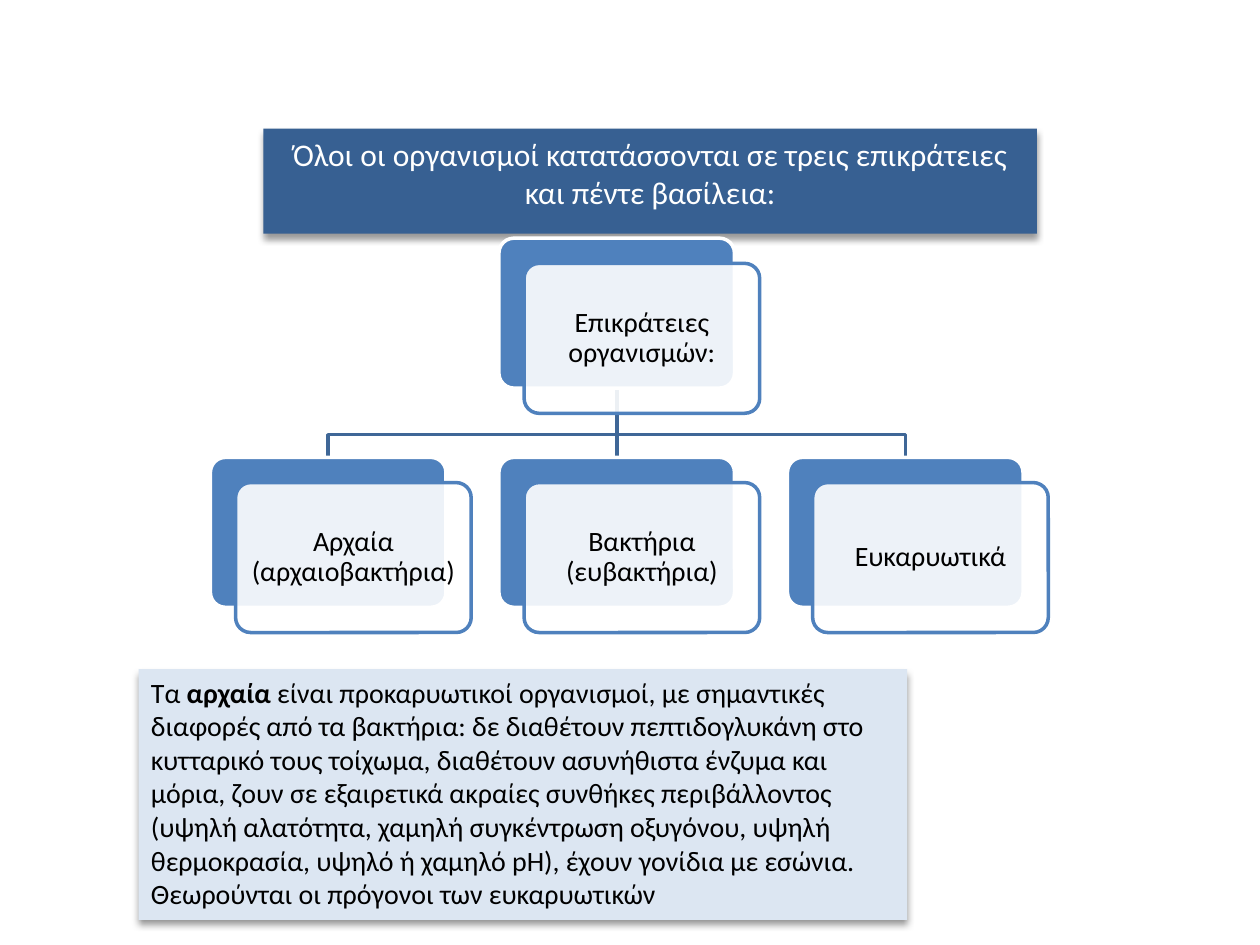
"""Build a slide that shows the three domains of organisms as a tree."""
from lxml.etree import SubElement
from pptx import Presentation
from pptx.dml.color import RGBColor
from pptx.enum.shapes import MSO_CONNECTOR as Connector, MSO_SHAPE as Preset
from pptx.enum.text import MSO_ANCHOR as Anchor, MSO_AUTO_SIZE as AutoSize, PP_ALIGN as Align
from pptx.oxml.ns import qn
from pptx.util import Inches, Pt


def paint(shape, fill, line=None, alpha=None, shadow=False):
    """Set the fill, outline and shadow of a shape from hex strings."""
    shape.fill.solid()
    shape.fill.fore_color.rgb = RGBColor.from_string(fill)
    if alpha:
        color = shape.fill._xPr.find(".//" + qn("a:srgbClr"))
        SubElement(color, qn("a:alpha"), val=str(alpha * 1000))
    if line:
        shape.line.color.rgb = RGBColor.from_string(line)
        shape.line.width = Pt(2)
    else:
        shape.line.fill.background()
    shape.shadow.inherit = False
    if shadow:
        effects = shape._element.spPr.find(qn("a:effectLst"))
        outer = SubElement(effects, qn("a:outerShdw"), blurRad=str(Pt(4)), dist=str(Pt(3)),
                           dir="5400000", rotWithShape="0")
        black = SubElement(outer, qn("a:srgbClr"), val="000000")
        SubElement(black, qn("a:alpha"), val="40000")


def write(shape, runs, size, color, align, frame_format):
    """Write (text, bold) runs as the one paragraph of a shape."""
    for name, value in {"word_wrap": True, **frame_format}.items():
        setattr(shape.text_frame, name, value)
    paragraph = shape.text_frame.paragraphs[0]
    paragraph.alignment = align
    for text, bold in runs:
        run = paragraph.add_run()
        run.text = text
        for name, value in {"name": "Calibri", "size": Pt(size), "bold": bold}.items():
            setattr(run.font, name, value)
        run.font.color.rgb = RGBColor.from_string(color)
    return paragraph


presentation = Presentation()
presentation.slide_width, presentation.slide_height = Inches(10), Inches(7.5)
slide = presentation.slides.add_slide(presentation.slide_layouts[5])
shapes = slide.shapes

grow = {"auto_size": AutoSize.SHAPE_TO_FIT_TEXT, "vertical_anchor": Anchor.TOP}
title = shapes.title
title_box = {"left": 2.09, "top": 1.02, "width": 6.14, "height": 0.71}
for name, value in title_box.items():
    setattr(title, name, Inches(value))
paint(title, "376092", shadow=True)
write(title, [("Όλοι οι οργανισμοί κατατάσσονται σε τρεις επικράτειες και πέντε βασίλεια:", False)],
      18, "FFFFFF", Align.CENTER, grow)

card_width, card_height = Inches(1.87), Inches(1.19)
columns = [Inches(1.67 + 2.29 * column) for column in range(3)]
rows = [Inches(1.89), Inches(3.63)]
shift = Inches(0.2)

centers = [left + card_width // 2 for left in columns]
trunk, start, bend, end = centers[1], rows[0] + card_height, Inches(3.45), rows[1]
branches = []
for center in (centers[2], centers[0]):
    builder = shapes.build_freeform(trunk, start)
    builder.add_line_segments([(trunk, bend), (center, bend), (center, end)], close=False)
    branch = builder.convert_to_shape()
    branch.fill.background()
    branches.append(branch)
branches.append(shapes.add_connector(Connector.STRAIGHT, trunk, start, trunk, end))
for branch in branches:
    branch.line.color.rgb = RGBColor.from_string("3F6797")
    branch.line.width = Pt(2)
    SubElement(branch._element.spPr, qn("a:effectLst"))

cards = [
    (1, 0, "Επικράτειες οργανισμών:"),
    (0, 1, "Αρχαία (αρχαιοβακτήρια)"),
    (1, 1, "Βακτήρια (ευβακτήρια)"),
    (2, 1, "Ευκαρυωτικά"),
]
card_format = {"vertical_anchor": Anchor.MIDDLE}
for side in ("left", "top", "right", "bottom"):
    card_format["margin_" + side] = Inches(0.07)
for column, row, label in cards:
    left, top = columns[column], rows[row]
    back = shapes.add_shape(Preset.ROUNDED_RECTANGLE, left, top, card_width, card_height)
    front = shapes.add_shape(Preset.ROUNDED_RECTANGLE, left + shift, top + shift,
                             card_width, card_height)
    paint(back, "4F81BD", "FFFFFF")
    paint(front, "FFFFFF", "4F81BD", alpha=90)
    for card in (back, front):
        card.adjustments[0] = 0.1
    paragraph = write(front, [(label, False)], 16, "000000", Align.CENTER, card_format)
    paragraph.line_spacing = 0.9

note = shapes.add_shape(Preset.RECTANGLE, Inches(1.1), Inches(5.31), Inches(6.1), Inches(1.99))
paint(note, "DCE6F2", shadow=True)
note_runs = [
    ("Τα ", False),
    ("αρχαία ", True),
    ("είναι προκαρυωτικοί οργανισμοί, με σημαντικές διαφορές από τα βακτήρια: "
     "δε διαθέτουν πεπτιδογλυκάνη στο κυτταρικό τους τοίχωμα, διαθέτουν ασυνήθιστα "
     "ένζυμα και μόρια, ζουν σε εξαιρετικά ακραίες συνθήκες περιβάλλοντος "
     "(υψηλή αλατότητα, χαμηλή συγκέντρωση οξυγόνου, υψηλή θερμοκρασία, υψηλό ή "
     "χαμηλό pH), έχουν γονίδια με εσώνια. Θεωρούνται οι πρόγονοι των ευκαρυωτικών", False),
]
write(note, note_runs, 16, "000000", Align.LEFT, grow)

presentation.save("out.pptx")
